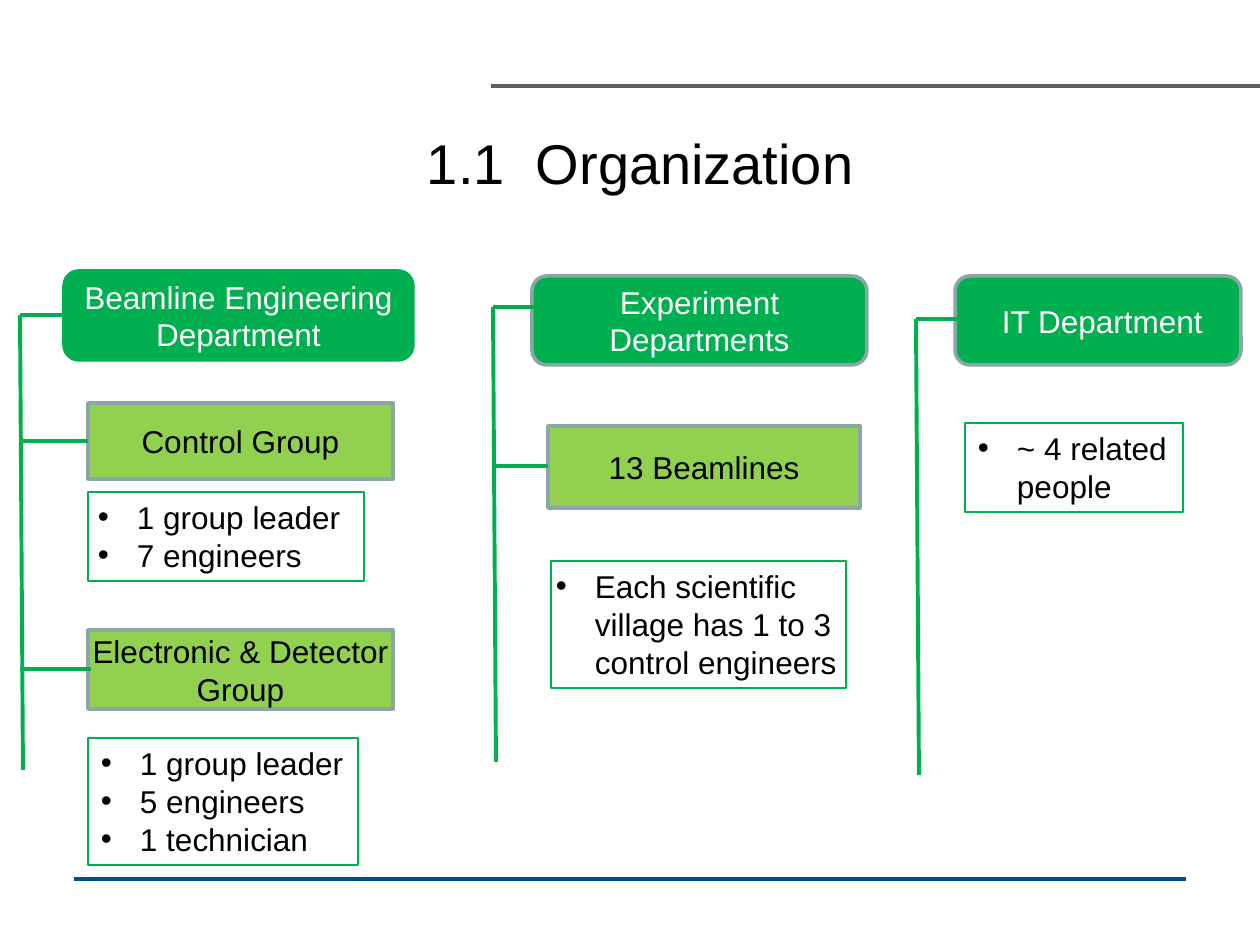
"""Builds the organization slide: three departments with their groups and staff."""
from lxml import etree
from pptx import Presentation
from pptx import util as u
from pptx.dml.color import RGBColor
from pptx.enum import shapes, text
from pptx.oxml.ns import qn

PX = 914400 / 126
GREEN = RGBColor(0x00, 0xB0, 0x50)
LIME = RGBColor(0x92, 0xD0, 0x50)
SLATE = RGBColor(0x8A, 0xA6, 0xA8)
GREY = RGBColor(0x5F, 0x5F, 0x5F)
BLUE = RGBColor(0x00, 0x50, 0x88)
BLACK = RGBColor(0x00, 0x00, 0x00)
WHITE = RGBColor(0xFF, 0xFF, 0xFF)

TITLE = ("1.1  Organization", (98, 98, 1085, 129))
RULES = [((491, 86, 1260, 86), GREY), ((74, 879, 1186, 879), BLUE)]
DEPARTMENTS = [
    ("Beamline Engineering Department", (64, 271, 349, 89), GREEN),
    ("Experiment Departments", (532, 276, 335, 89), SLATE),
    (" IT Department", (955, 276, 286, 89), SLATE),
]
GROUPS = [
    (["Control Group"], (88, 403, 305, 76)),
    (["Electronic & Detector", "Group"], (88, 630, 305, 79)),
    (["13 Beamlines"], (548, 426, 312, 82)),
]
STAFF = [
    (["1 group leader", "7 engineers"], (88, 492, 276, 89), (10, 0)),
    (["1 group leader", "5 engineers", "1 technician"], (88, 738, 270, 127), (13, 13)),
    (["Each scientific village has 1 to 3 control engineers"], (551, 561, 295, 127), (5, 0)),
    (["~ 4 related people"], (965, 423, 218, 89), (13, 13)),
]
TREES = [
    {"trunk": (20, 315, 23, 770), "branches": [(315, 64), (441, 88), (669, 91)]},
    {"trunk": (493, 307, 496, 762), "branches": [(307, 543), (466, 548)]},
    {"trunk": (916, 319, 919, 775), "branches": [(319, 966)]},
]
FONT = {"name": "Arial", "size": u.Pt(18)}
INDENT = 39


def emu(*lengths):
    return [u.Emu(round(n * PX)) for n in lengths]


def assign(target, values):
    for name, value in values.items():
        setattr(target, name, value)


def write(sp, lines, color, insets=(13, 13), bullets=False, **font):
    tf = sp.text_frame
    left, right, edge = emu(*insets, 6)
    assign(tf, {"word_wrap": True, "margin_left": left, "margin_right": right,
                "margin_top": edge, "margin_bottom": edge,
                "vertical_anchor": text.MSO_ANCHOR.TOP if bullets else text.MSO_ANCHOR.MIDDLE})
    for i, line in enumerate(lines):
        p = tf.paragraphs[0] if i == 0 else tf.add_paragraph()
        p.alignment = text.PP_ALIGN.LEFT if bullets else text.PP_ALIGN.CENTER
        if bullets:
            pPr = p._p.get_or_add_pPr()
            indent = emu(INDENT)[0]
            pPr.set("marL", str(indent))
            pPr.set("indent", str(-indent))
            etree.SubElement(pPr, qn("a:buFont"), typeface="Arial")
            etree.SubElement(pPr, qn("a:buChar"), char="•")
        r = p.add_run()
        r.text = line
        assign(r.font, {**FONT, **font})
        r.font.color.rgb = color


def add_box(s, kind, box, fill, line, width):
    sp = s.shapes.add_shape(kind, *emu(*box))
    sp.shadow.inherit = False
    if fill is None:
        sp.fill.background()
    else:
        sp.fill.solid()
        sp.fill.fore_color.rgb = fill
    sp.line.color.rgb = line
    sp.line.width = u.Pt(width)
    return sp


def add_line(s, ends, color):
    line = s.shapes.add_connector(shapes.MSO_CONNECTOR.STRAIGHT, *emu(*ends))
    line.line.color.rgb = color
    line.line.width = u.Pt(2.25)
    etree.SubElement(line._element.spPr, qn("a:effectLst"))


def main():
    prs = Presentation()
    prs.slide_width, prs.slide_height = emu(1260, 945)
    s = prs.slides.add_slide(prs.slide_layouts[6])
    rect = shapes.MSO_SHAPE.RECTANGLE
    rounded = shapes.MSO_SHAPE.ROUNDED_RECTANGLE

    for ends, color in RULES:
        add_line(s, ends, color)
    title, box = TITLE
    write(s.shapes.add_textbox(*emu(*box)), [title], BLACK, size=u.Pt(32))
    for name, box, line in DEPARTMENTS:
        write(add_box(s, rounded, box, GREEN, line, 2), [name], WHITE)
    for lines, box in GROUPS:
        write(add_box(s, rect, box, LIME, SLATE, 2), lines, BLACK, (0, 0))
    for lines, box, insets in STAFF:
        write(add_box(s, rect, box, None, GREEN, 0.75), lines, BLACK, insets, True)
    for tree in TREES:
        add_line(s, tree["trunk"], GREEN)
        for y, end in tree["branches"]:
            add_line(s, (tree["trunk"][0], y, end, y), GREEN)
    prs.save("out.pptx")


if __name__ == "__main__":
    main()
